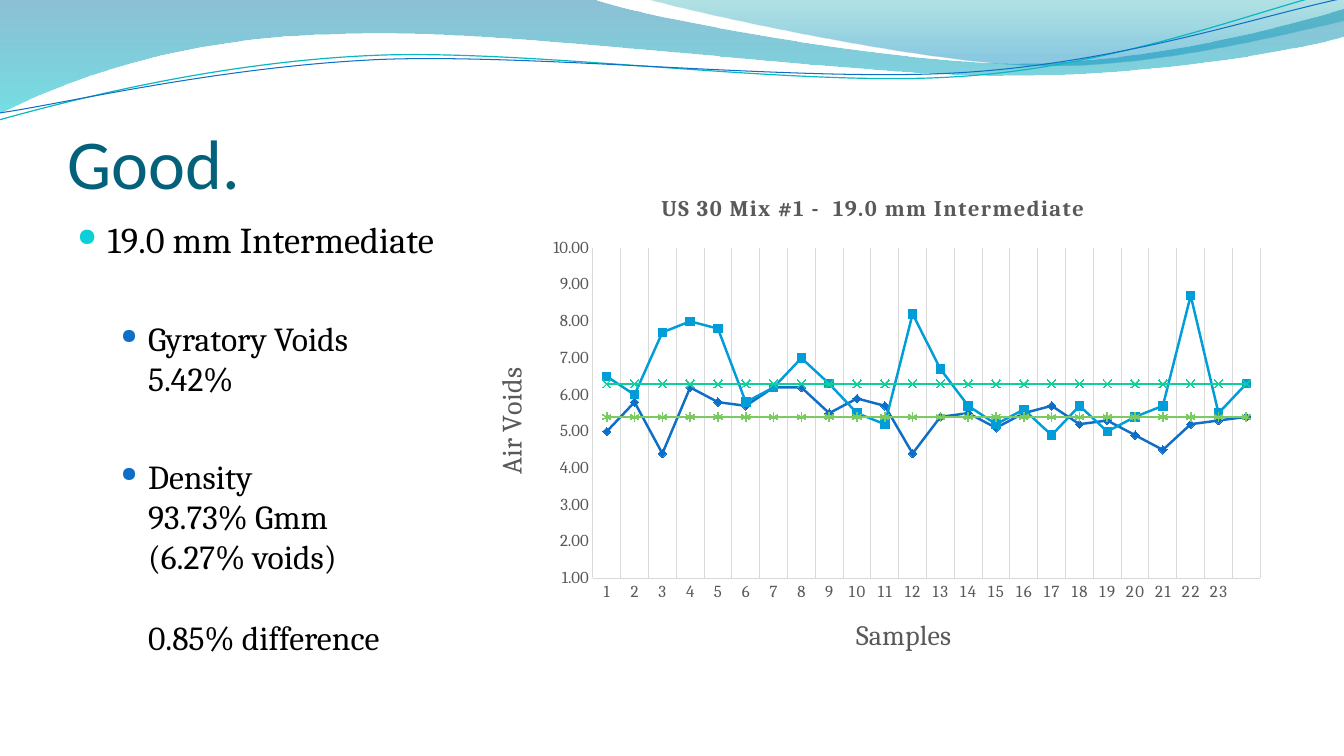
from lxml import etree
from pptx import Presentation
from pptx.chart.data import CategoryChartData
from pptx.dml.color import RGBColor
from pptx.enum.chart import XL_CHART_TYPE, XL_MARKER_STYLE as Marker, XL_TICK_MARK
from pptx.enum.text import MSO_ANCHOR, PP_ALIGN
from pptx.oxml import parse_xml
from pptx.oxml.ns import nsdecls, qn
from pptx.util import Inches, Pt

TITLE = "Good."
# text, level, space before in points, bullet shown
BODY = [
    ("19.0 mm Intermediate", 0, 0, True),
    ("Gyratory Voids\v5.42%", 1, 41, True),
    ("Density\v93.73% Gmm\v(6.27% voids)", 1, 41, True),
    ("0.85% difference", 1, 29, False),
]
# left margin, hanging indent, font size, bullet colour, bullet size in percent
LEVELS = [(0.3, 0.3, 26, "0BD0D9", 68), (0.7, 0.27, 24, "0F6FC6", 62)]

CHART_BOX = (4.67, 1.73, 8, 5)
CHART_TITLE = "US 30 Mix #1 -  19.0 mm Intermediate"
SAMPLES = [str(number) for number in range(1, 24)] + [""]
GYRATORY = [5, 5.8, 4.4, 6.2, 5.8, 5.7, 6.2, 6.2, 5.5, 5.9, 5.7, 4.4,
            5.4, 5.5, 5.1, 5.5, 5.7, 5.2, 5.3, 4.9, 4.5, 5.2, 5.3, 5.4]
DENSITY = [6.5, 6, 7.7, 8, 7.8, 5.8, 6.2, 7, 6.3, 5.5, 5.2, 8.2,
           6.7, 5.7, 5.2, 5.6, 4.9, 5.7, 5, 5.4, 5.7, 8.7, 5.5, 6.3]
# name, values, colour, marker, marker is filled
SERIES = [
    ("Series 1", GYRATORY, "0F6FC6", Marker.DIAMOND, True),
    ("Series 2", DENSITY, "009DD9", Marker.SQUARE, True),
    ("Series 3", [6.3] * len(SAMPLES), "10CF9B", Marker.X, False),
    ("Series 4", [5.4] * len(SAMPLES), "7CCA62", Marker.STAR, False),
]

# Each wave: start point, then points (2 numbers) or Bezier curves (6 numbers)
BANDS = [
    ((0, 0), [(5.87, -0.01), (6.34, 0.17, 8.85, 0.63, 10.11, 0.63),
              (11.38, 0.63, 12.78, 0.26, 13.33, 0.09), (13.35, 0.36),
              (13.11, 0.44, 11.6, 0.76, 9.94, 0.75),
              (8.29, 0.75, 5.09, 0.28, 3.43, 0.34),
              (1.72, 0.36, 0.61, 0.83, -0.01, 1.13)],
     [(0, "0074A1", 45), (1, "00C6CF", 55)]),
    ((6.39, -0.01), [(6.79, 0.11, 9.09, 0.62, 10.25, 0.65),
                     (11.41, 0.69, 12.82, 0.32, 13.33, 0.21), (13.33, 0)],
     [(0, "00A1A9", 30), (0.8, "008BBF", 45)]),
]
CURVES = [
    ((-0.01, 1.19), [(0.64, 1.01, 2.11, 0.62, 3.69, 0.55),
                     (5.27, 0.48, 7.9, 0.87, 9.5, 0.76),
                     (11.1, 0.66, 12.52, 0.08, 13.31, -0.1)], "0AB8BF", 0.85),
    ((0, 1.12), [(0.63, 1.03, 2.18, 0.66, 3.78, 0.59),
                 (5.37, 0.53, 7.96, 0.82, 9.55, 0.72),
                 (11.15, 0.62, 12.55, 0.14, 13.34, -0.02)], "0F6FC6", 0.75),
]


def color(hex_string):
    return RGBColor.from_string(hex_string)


def set_font(font, size, hex_string, name="Cambria", bold=False):
    font.size, font.name, font.bold = Pt(size), name, bold
    font.color.rgb = color(hex_string)


def add_wave(slide, start, segments, close):
    """Build an outline through all points, then bend each six-number segment."""
    points = [tuple(map(Inches, segment[i:i + 2]))
              for segment in segments for i in range(0, len(segment), 2)]
    builder = slide.shapes.build_freeform(*map(Inches, start))
    builder.add_line_segments(points, close=close)
    shape = builder.convert_to_shape()
    shape.shadow.inherit = False
    sides = iter(list(shape._element.iter(qn("a:lnTo"))))
    for segment in segments:
        side = next(sides)
        if len(segment) == 6:
            side.addprevious(bend := etree.Element(qn("a:cubicBezTo")))
            for part in (side, next(sides), next(sides)):
                bend.append(part[0])
                part.getparent().remove(part)
    return shape


def add_bullet(paragraph, hex_string, percent):
    properties = paragraph._p.get_or_add_pPr()
    bullet_color = etree.SubElement(properties, qn("a:buClr"))
    etree.SubElement(bullet_color, qn("a:srgbClr"), val=hex_string)
    etree.SubElement(properties, qn("a:buSzPct"), val=str(percent * 1000))
    etree.SubElement(properties, qn("a:buChar"), char="●")


def place(element, left, top, width=None, height=None):
    """Fix a chart part, in inches from the chart corner; a size marks the plot area."""
    _, _, chart_width, chart_height = CHART_BOX
    inner = '<c:layoutTarget val="inner"/>' if width else ""
    size = (f'<c:w val="{width / chart_width}"/><c:h val="{height / chart_height}"/>'
            if width else "")
    layout = parse_xml(
        f'<c:layout {nsdecls("c")}><c:manualLayout>{inner}<c:xMode val="edge"/>'
        f'<c:yMode val="edge"/><c:x val="{left / chart_width}"/>'
        f'<c:y val="{top / chart_height}"/>{size}</c:manualLayout></c:layout>')
    for old in element.findall(qn("c:layout")):
        element.remove(old)
    element.insert(0 if element.find(qn("c:tx")) is None else 1, layout)


def write_title(title, text, size, left, top, bold=False):
    paragraph = title.text_frame.paragraphs[0]
    paragraph.text = text
    set_font(paragraph.font, size, "595959", bold=bold)
    place(title._element, left, top)


presentation = Presentation()
presentation.slide_width, presentation.slide_height = Inches(13.33), Inches(7.5)
slide = presentation.slides.add_slide(presentation.slide_layouts[5])

# Waves along the top
for start, segments, stops in BANDS:
    band = add_wave(slide, start, segments, True)
    band.line.fill.background()
    band.fill.gradient()
    band.fill.gradient_angle = 270
    for stop, (position, hex_string, opacity) in zip(band.fill.gradient_stops, stops):
        stop.position = position
        stop.color.rgb = color(hex_string)
    for element, (_, _, opacity) in zip(band._element.spPr.iter(qn("a:srgbClr")), stops):
        etree.SubElement(element, qn("a:alpha"), val=str(opacity * 1000))
for start, segments, hex_string, width in CURVES:
    curve = add_wave(slide, start, segments, False)
    curve.fill.background()
    curve.line.color.rgb = color(hex_string)
    curve.line.width = Pt(width)

# Title
title = slide.shapes.title
title.left, title.top, title.width, title.height = map(Inches, (0.67, 0.77, 12, 1.25))
frame = title.text_frame
frame.text = TITLE
frame.vertical_anchor = MSO_ANCHOR.BOTTOM
frame.margin_left = frame.margin_right = frame.margin_bottom = 0
frame.paragraphs[0].alignment = PP_ALIGN.LEFT
set_font(frame.paragraphs[0].font, 50, "04617B", "Calibri")

# Bulleted findings
body = slide.shapes.add_textbox(*map(Inches, (0.67, 2.1, 5.89, 4.85))).text_frame
body.word_wrap = True
for index, (text, level, gap, bulleted) in enumerate(BODY):
    paragraph = body.add_paragraph() if index else body.paragraphs[0]
    margin, hanging, size, bullet_color, percent = LEVELS[level]
    paragraph.text, paragraph.level = text, level
    properties = paragraph._p.get_or_add_pPr()
    properties.set("marL", str(Inches(margin)))
    properties.set("indent", str(-Inches(hanging) if bulleted else 0))
    if gap:
        paragraph.space_before = Pt(gap)
    if bulleted:
        add_bullet(paragraph, bullet_color, percent)
    set_font(paragraph.font, size, "000000")

# Air voids chart
data = CategoryChartData(number_format="0.00")
data.categories = SAMPLES
for name, values, *_ in SERIES:
    data.add_series(name, values)
chart = slide.shapes.add_chart(XL_CHART_TYPE.LINE_MARKERS,
                               *map(Inches, CHART_BOX), data).chart
set_font(chart.font, 10, "000000")
chart.has_legend = False
chart.plots[0].vary_by_categories = False
for series, (_, _, hex_string, marker, filled) in zip(chart.plots[0].series, SERIES):
    series.smooth = False
    series.format.line.color.rgb = color(hex_string)
    series.format.line.width = Pt(1.75)
    series.marker.style, series.marker.size = marker, 6
    series.marker.format.line.color.rgb = color(hex_string)
    if filled:
        series.marker.format.fill.solid()
        series.marker.format.fill.fore_color.rgb = color(hex_string)
    else:
        series.marker.format.fill.background()

# Axes, titles and plot area
samples_axis, voids_axis = chart.category_axis, chart.value_axis
samples_axis.has_major_gridlines, voids_axis.has_major_gridlines = True, False
for axis in (samples_axis, voids_axis):
    axis.major_tick_mark = axis.minor_tick_mark = XL_TICK_MARK.NONE
    set_font(axis.tick_labels.font, 12, "595959")
lines = (samples_axis.format.line, voids_axis.format.line,
         samples_axis.major_gridlines.format.line)
for line in lines:
    line.color.rgb = color("D9D9D9")
    line.width = Pt(0.75)
voids_axis.minimum_scale, voids_axis.maximum_scale, voids_axis.major_unit = 1, 10, 1
voids_axis.tick_labels.number_format = "0.00"
voids_axis.tick_labels.number_format_is_linked = False
write_title(chart.chart_title, CHART_TITLE, 16, 1.85, 0.15, bold=True)
write_title(samples_axis.axis_title, "Samples", 20, 3.77, 4.34)
write_title(voids_axis.axis_title, "Air Voids", 20, 0.17, 1.87)
for element in (chart.chart_title._element, samples_axis._element.find(qn("c:txPr"))):
    next(element.iter(qn("a:defRPr"))).set("spc", "120")
place(chart._chartSpace.chart.plotArea, 1.21, 0.73, 6.62, 3.28)

presentation.save("out.pptx")
